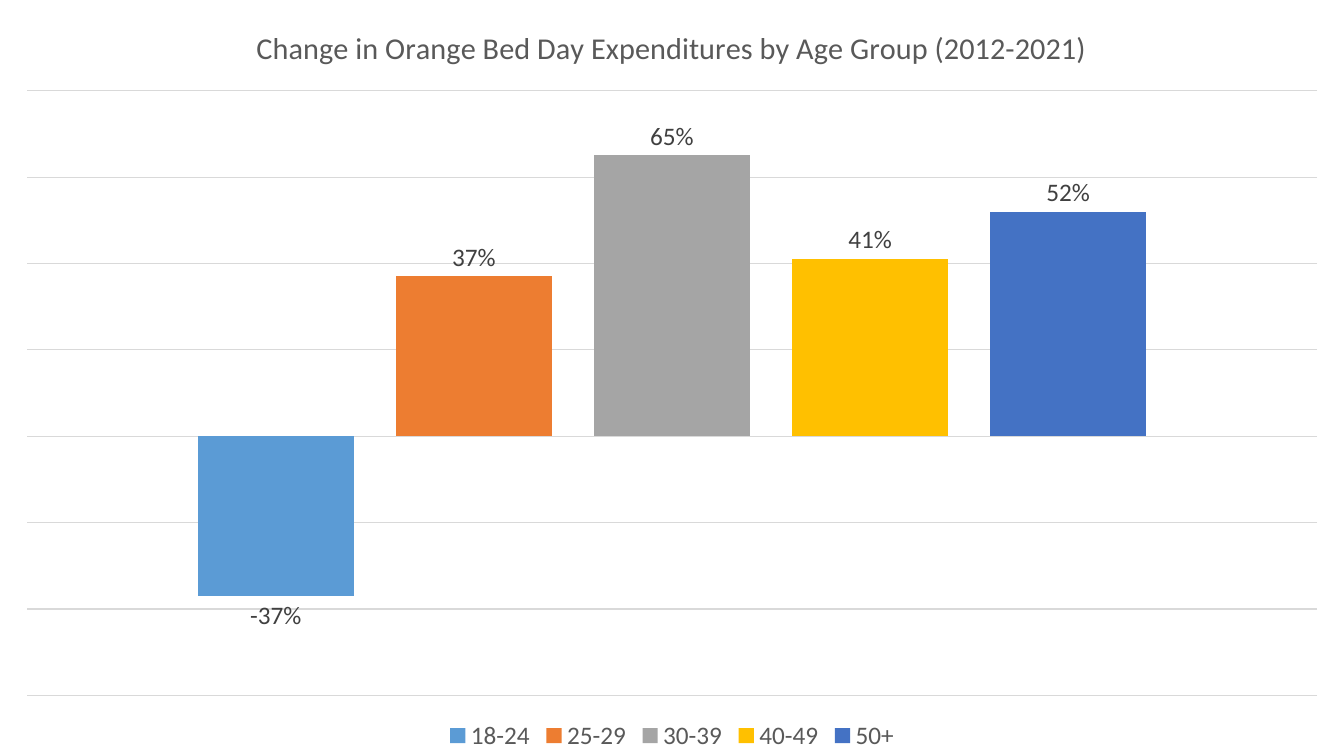
from lxml import etree
from pptx import Presentation
from pptx import util as u
from pptx.chart.data import CategoryChartData
from pptx.dml.color import RGBColor
from pptx.enum import chart as charts
from pptx.oxml import ns

TITLE = "Change in Orange Bed Day Expenditures by Age Group (2012-2021)"
AGE_GROUPS = [
    ("18-24", -0.37, "5B9BD5"),
    ("25-29", 0.37, "ED7D31"),
    ("30-39", 0.65, "A5A5A5"),
    ("40-49", 0.41, "FFC000"),
    ("50+", 0.52, "4472C4"),
]


def color(value):
    return RGBColor.from_string(value)


class ChartSlide:
    font_name = "Calibri"
    text_color = "595959"
    label_color = "404040"
    grid_color = "D9D9D9"
    percent = "0%"

    def __init__(self, deck):
        self.slide = deck.slides.add_slide(deck.slide_layouts[6])

    def style_font(self, font, size, value):
        font.name = self.font_name
        font.size = u.Pt(size)
        font.bold = False
        font.color.rgb = color(value)

    def add_columns(self, groups, left, top, width, height):
        data = CategoryChartData(number_format=self.percent)
        data.categories = ["1"]
        for name, change, _ in groups:
            data.add_series(name, [change])
        frame = self.slide.shapes.add_chart(
            charts.XL_CHART_TYPE.COLUMN_CLUSTERED,
            u.Inches(left), u.Inches(top), u.Inches(width), u.Inches(height), data)
        chart = frame.chart
        self.style_font(chart.font, 18, "000000")
        plot = chart.plots[0]
        plot.gap_width = 219
        plot.overlap = -27
        plot.vary_by_categories = False
        for series, (_, _, fill) in zip(plot.series, groups):
            self.style_series(series, fill)
        return chart

    def style_series(self, series, fill):
        series.invert_if_negative = False
        series.format.fill.solid()
        series.format.fill.fore_color.rgb = color(fill)
        labels = series.data_labels
        labels.show_value = True
        labels.number_format = self.percent
        labels.number_format_is_linked = False
        labels.position = charts.XL_LABEL_POSITION.OUTSIDE_END
        self.style_font(labels.font, 18, self.label_color)

    def add_title(self, chart, title):
        frame = chart.chart_title.text_frame
        frame.text = title
        self.style_font(frame.paragraphs[0].runs[0].font, 21.6, self.text_color)
        chart.chart_title.include_in_layout = False

    def add_legend(self, chart):
        chart.has_legend = True
        chart.legend.position = charts.XL_LEGEND_POSITION.BOTTOM
        chart.legend.include_in_layout = False
        self.style_font(chart.legend.font, 18, self.text_color)

    def style_axes(self, chart, low, high, step):
        chart.category_axis.visible = False
        axis = chart.value_axis
        axis.visible = False
        axis.minimum_scale, axis.maximum_scale = low, high
        axis.major_unit = step
        axis.tick_labels.number_format = self.percent
        axis.tick_labels.number_format_is_linked = False
        axis.has_major_gridlines = True
        line = axis.major_gridlines.format.line
        line.width = u.Pt(0.75)
        line.color.rgb = color(self.grid_color)

    def place_plot(self, chart, **fractions):
        """Fix the inner plot area, given as fractions of the chart."""
        area = chart.plots[0]._element.getparent()
        for layout in area.findall(ns.qn("c:layout")):
            area.remove(layout)
        layout = etree.Element(ns.qn("c:layout"))
        area.insert(0, layout)
        manual = etree.SubElement(layout, ns.qn("c:manualLayout"))
        settings = {"layoutTarget": "inner", "xMode": "edge", "yMode": "edge", **fractions}
        for name, value in settings.items():
            etree.SubElement(manual, ns.qn(f"c:{name}")).set("val", str(value))


def main():
    deck = Presentation()
    deck.slide_width = u.Inches(13.33)
    deck.slide_height = u.Inches(7.5)
    page = ChartSlide(deck)
    chart = page.add_columns(AGE_GROUPS, 0, 0, 13.33, 7.5)
    page.add_title(chart, TITLE)
    page.add_legend(chart)
    page.style_axes(chart, -0.6, 0.8, 0.2)
    page.place_plot(chart, x=0.02, y=0.12, w=0.96, h=0.8)
    deck.save("out.pptx")


if __name__ == "__main__":
    main()
